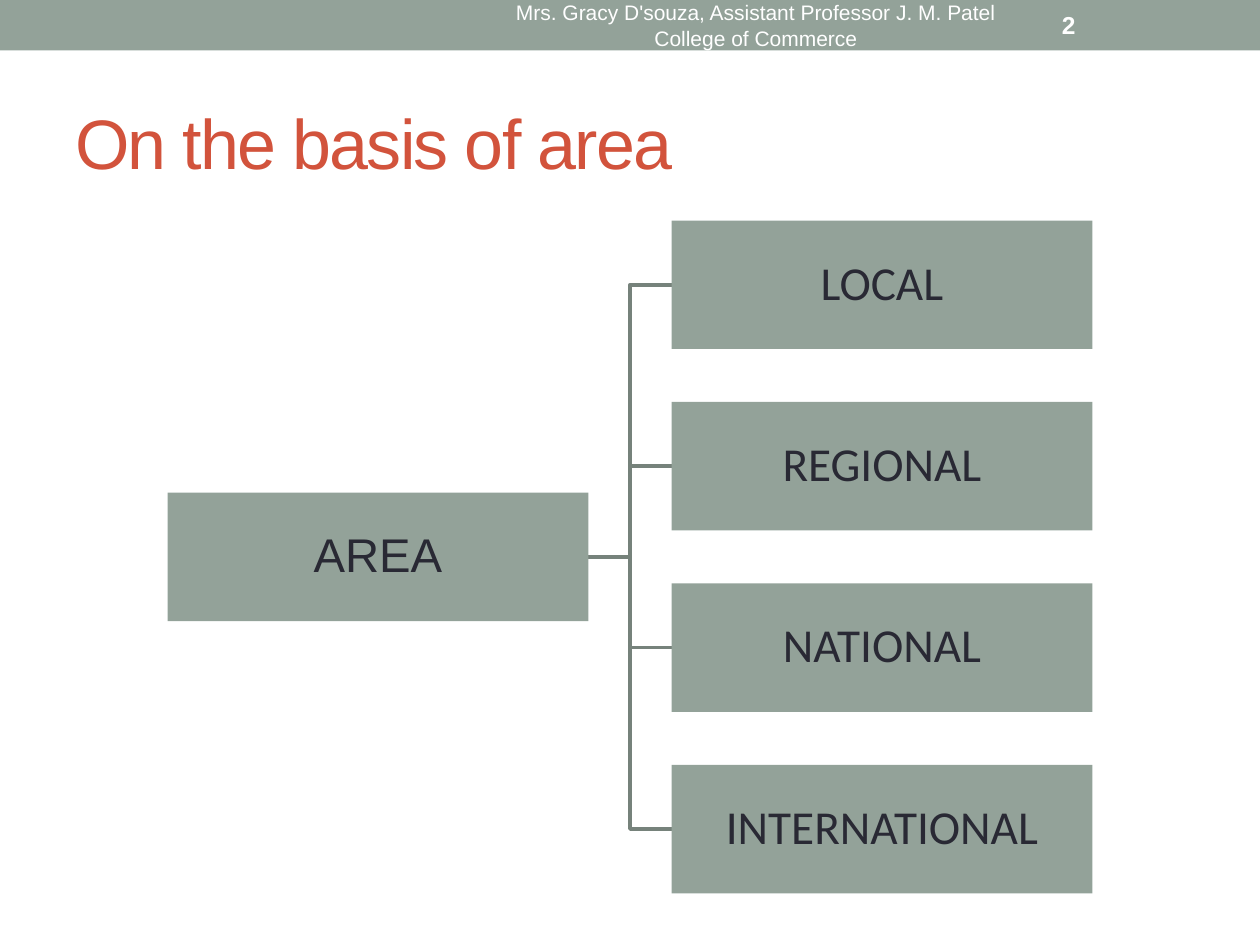
from pptx import Presentation
from pptx.dml.color import RGBColor
from pptx.enum.shapes import MSO_SHAPE
from pptx.enum.text import MSO_ANCHOR, PP_ALIGN
from pptx.util import Inches, Pt

TITLE = "On the basis of area"
PRESENTER = "Mrs. Gracy D'souza, Assistant Professor J. M. Patel College of Commerce"
PAGE = "2"
ROOT = "AREA"
BRANCHES = ["LOCAL", "REGIONAL", "NATIONAL", "INTERNATIONAL"]

SAGE, LINE, INK, RED, WHITE = "93A299", "76827B", "292934", "D2533C", "FFFFFF"
BOX_W, BOX_H = 3.34, 1.02
ROOT_X, BRANCH_X = 1.33, 5.33
FIRST_Y, PITCH = 1.75, 1.44


def color(hex_code):
    return RGBColor.from_string(hex_code)


def write(shape, text, size, hex_code, font="Arial", align=PP_ALIGN.LEFT, bold=False):
    frame = shape.text_frame
    frame.word_wrap = True
    frame.vertical_anchor = MSO_ANCHOR.MIDDLE
    paragraph = frame.paragraphs[0]
    paragraph.alignment = align
    run = paragraph.add_run()
    run.text = text
    run.font.size = Pt(size)
    run.font.name = font
    run.font.bold = bold
    run.font.color.rgb = color(hex_code)
    return run


def add_text(slide, left, top, width, height, *style, **options):
    area = slide.shapes.add_textbox(Inches(left), Inches(top), Inches(width), Inches(height))
    return write(area, *style, **options)


def add_block(slide, left, top, width, height):
    block = slide.shapes.add_shape(
        MSO_SHAPE.RECTANGLE, Inches(left), Inches(top), Inches(width), Inches(height))
    block.shadow.inherit = False
    block.fill.solid()
    block.fill.fore_color.rgb = color(SAGE)
    block.line.fill.background()
    return block


def add_node(slide, left, top, label, font):
    node = add_block(slide, left, top, BOX_W, BOX_H)
    frame = node.text_frame
    frame.margin_left = frame.margin_right = Inches(0.02)
    frame.margin_top = frame.margin_bottom = Inches(0.02)
    write(node, label, 27, INK, font, PP_ALIGN.CENTER)
    frame.paragraphs[0].line_spacing = 0.9


def add_elbow(slide, start_x, start_y, end_x, end_y):
    middle_x = (start_x + end_x) / 2
    points = [(start_x, start_y), (middle_x, start_y), (middle_x, end_y), (end_x, end_y)]
    corners = [(Inches(x), Inches(y)) for x, y in points]
    builder = slide.shapes.build_freeform(*corners[0])
    builder.add_line_segments(corners[1:], close=False)
    elbow = builder.convert_to_shape()
    elbow.shadow.inherit = False
    elbow.fill.background()
    elbow.line.color.rgb = color(LINE)
    elbow.line.width = Pt(2.08)


def main():
    deck = Presentation()
    deck.slide_width, deck.slide_height = Inches(10), Inches(7.5)
    slide = deck.slides.add_slide(deck.slide_layouts[6])

    add_block(slide, 0, 0, 10, 0.4)
    title = add_text(slide, 0.5, 0.58, 9, 1.08, TITLE, 40, RED)
    title.font._element.set("spc", "-100")

    branch_tops = [FIRST_Y + PITCH * row for row in range(len(BRANCHES))]
    root_top = (branch_tops[0] + branch_tops[-1]) / 2
    for top in reversed(branch_tops):
        add_elbow(slide, ROOT_X + BOX_W, root_top + BOX_H / 2, BRANCH_X, top + BOX_H / 2)
    add_node(slide, ROOT_X, root_top, ROOT, "Arial")
    for top, label in zip(branch_tops, BRANCHES):
        add_node(slide, BRANCH_X, top, label, "Calibri")

    add_text(slide, 3.75, 0.02, 4.5, 0.36, PRESENTER, 12, WHITE, align=PP_ALIGN.CENTER)
    add_text(slide, 8.33, 0.02, 1.17, 0.36, PAGE, 14, WHITE, bold=True)
    deck.save("out.pptx")


if __name__ == "__main__":
    main()
